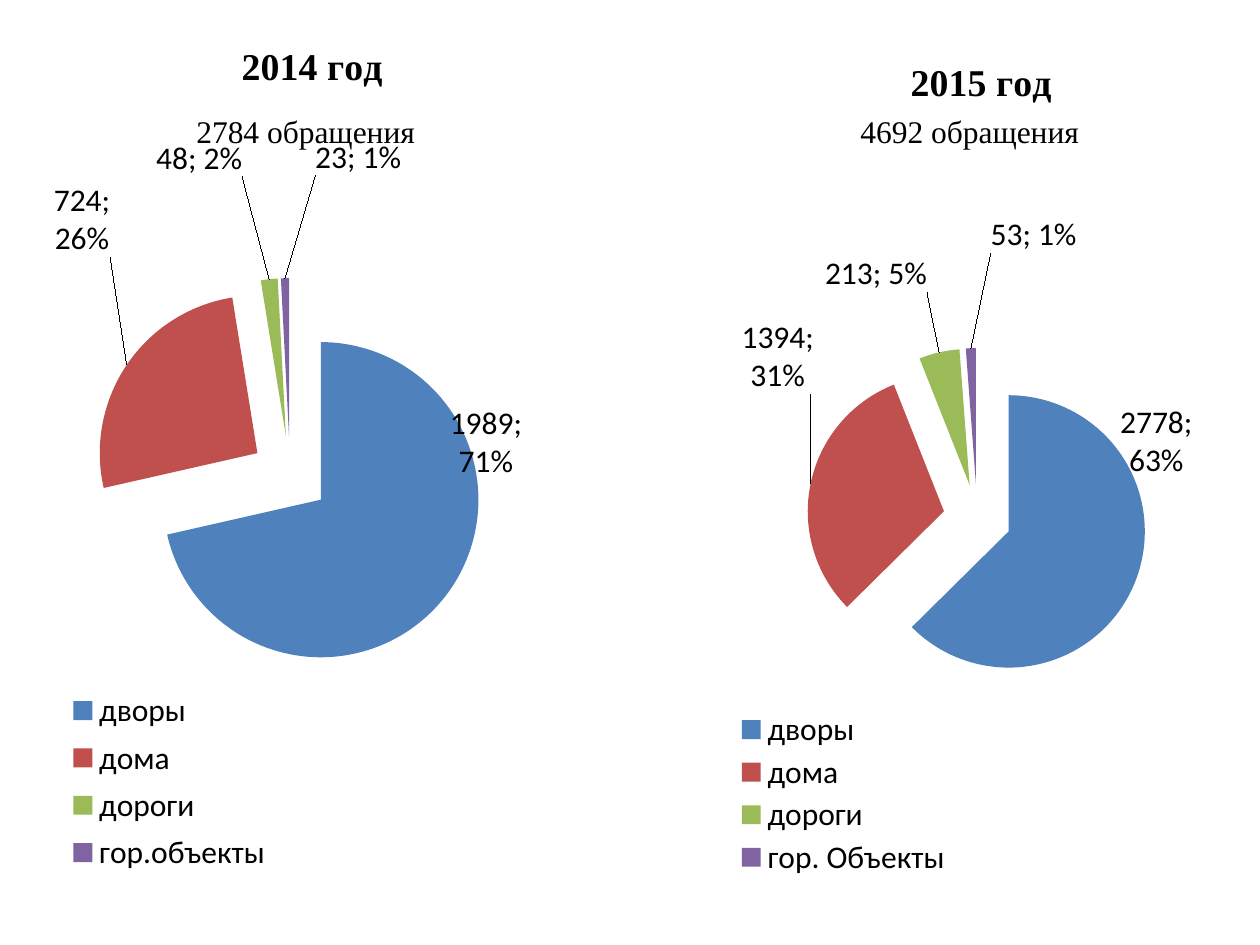
from dataclasses import dataclass

from pptx import Presentation
from pptx.chart.data import CategoryChartData
from pptx.dml.color import RGBColor
from pptx.enum.chart import XL_CHART_TYPE, XL_LEGEND_POSITION
from pptx.enum.text import MSO_AUTO_SIZE
from pptx.oxml import parse_xml
from pptx.oxml.ns import nsdecls, qn
from pptx.util import Inches, Pt


@dataclass(frozen=True)
class Theme:
    slices: tuple = ("4F81BD", "C0504D", "9BBB59", "8064A2")
    ink: str = "000000"
    body: str = "Calibri"
    head: str = "Times New Roman"
    text_size: float = 18
    title_size: float = 21.6
    explosion: int = 25


THEME = Theme()

# Content; layouts are shares of the chart, label shifts run slice by slice
YEARS = [
    dict(title="2015 год", note="4692 обращения", box=(5.63, 0.13, 4.17, 6.93), note_left=6.73,
         data={"дворы": 2778, "дома": 1394, "дороги": 213, "гор. Объекты": 53},
         title_at=(0.37, 0.04), plot_at=(0.18, 0.38, 0.66, 0.39), legend_at=(0.03, 0.79, 0.45, 0.2),
         shifts=[(-0.04, -0.21), (0.02, -0.1), (-0.02, -0.06), (0.12, -0.1)]),
    dict(title="2014 год", note="2784 обращения", box=(0.28, 0.21, 4.17, 6.85), note_left=1.46,
         data={"дворы": 1989, "дома": 724, "дороги": 48, "гор.объекты": 23},
         title_at=(0.38, 0.01), plot_at=(0.11, 0.29, 0.75, 0.46), legend_at=(0.03, 0.76, 0.45, 0.23),
         shifts=[(0, -0.23), (-0.02, -0.12), (-0.05, -0.11), (0.14, -0.11)]),
]
NOTE_TOP, NOTE_SIZE = 0.84, (1.96, 0.4)


def style(font, size=THEME.text_size, name=THEME.body, bold=False):
    font.size, font.name, font.bold = Pt(size), name, bold
    font.color.rgb = RGBColor.from_string(THEME.ink)


def add_text(tf, text, **fmt):
    p = tf.paragraphs[0]
    r = p.add_run()
    r.text = text
    style(r.font, **fmt)


def layout_xml(place, edge=True, inner=False):
    target = '<c:layoutTarget val="inner"/>' if inner else ""
    modes = '<c:xMode val="edge"/><c:yMode val="edge"/>' if edge else ""
    values = "".join(f'<c:{k} val="{v}"/>' for k, v in zip("xywh", place))
    return f"<c:layout {nsdecls('c')}><c:manualLayout>{target}{modes}{values}</c:manualLayout></c:layout>"


def set_layout(parent, index, place, **kw):
    for old in parent.findall(qn("c:layout")):
        parent.remove(old)
    parent.insert(index, parse_xml(layout_xml(place, **kw)))


def labels_xml(shifts):
    show = ('<c:dLblPos val="outEnd"/><c:showLegendKey val="0"/><c:showVal val="1"/>'
            '<c:showCatName val="0"/><c:showSerName val="0"/><c:showPercent val="1"/>'
            '<c:showBubbleSize val="0"/><c:separator>; </c:separator>')
    points = "".join(f'<c:dLbl><c:idx val="{i}"/>{layout_xml(d, edge=False)}{show}</c:dLbl>'
                     for i, d in enumerate(shifts))
    return f"<c:dLbls {nsdecls('c')}>{points}{show}<c:showLeaderLines val=\"1\"/></c:dLbls>"


def add_pie(s, year):
    data = CategoryChartData()
    data.categories = list(year["data"])
    data.add_series(year["title"], list(year["data"].values()))
    chart = s.shapes.add_chart(XL_CHART_TYPE.PIE, *map(Inches, year["box"]), data).chart
    style(chart.font)

    # Title and legend
    chart.has_title = True
    add_text(chart.chart_title.text_frame, year["title"],
             size=THEME.title_size, name=THEME.head, bold=True)
    chart.has_legend = True
    chart.legend.position = XL_LEGEND_POSITION.BOTTOM
    chart.legend.include_in_layout = False

    # Slices and their labels
    plot = chart.plots[0]
    plot.vary_by_categories = True
    series = plot.series[0]
    for i, color in enumerate(THEME.slices):
        fill = series.points[i].format.fill
        fill.solid()
        fill.fore_color.rgb = RGBColor.from_string(color)
    ser = series._element
    ser.find(qn("c:dPt")).addprevious(
        parse_xml(f'<c:explosion {nsdecls("c")} val="{THEME.explosion}"/>'))
    ser.find(qn("c:cat")).addprevious(parse_xml(labels_xml(year["shifts"])))

    # Positions inside the chart
    root = chart.element if hasattr(chart, "element") else chart._chartSpace
    body = root.find(qn("c:chart"))
    set_layout(body.find(qn("c:title")), 1, year["title_at"])
    set_layout(body.find(qn("c:plotArea")), 0, year["plot_at"], inner=True)
    set_layout(body.find(qn("c:legend")), 1, year["legend_at"])


def add_note(s, year):
    sp = s.shapes.add_textbox(*map(Inches, (year["note_left"], NOTE_TOP, *NOTE_SIZE)))
    tf = sp.text_frame
    tf.word_wrap = False
    tf.auto_size = MSO_AUTO_SIZE.SHAPE_TO_FIT_TEXT
    add_text(tf, year["note"], name=THEME.head)


def main():
    prs = Presentation()
    prs.slide_width, prs.slide_height = Inches(10), Inches(7.5)
    s = prs.slides.add_slide(prs.slide_layouts[6])
    for add in (add_pie, add_note):
        for year in YEARS:
            add(s, year)
    prs.save("out.pptx")


if __name__ == "__main__":
    main()
